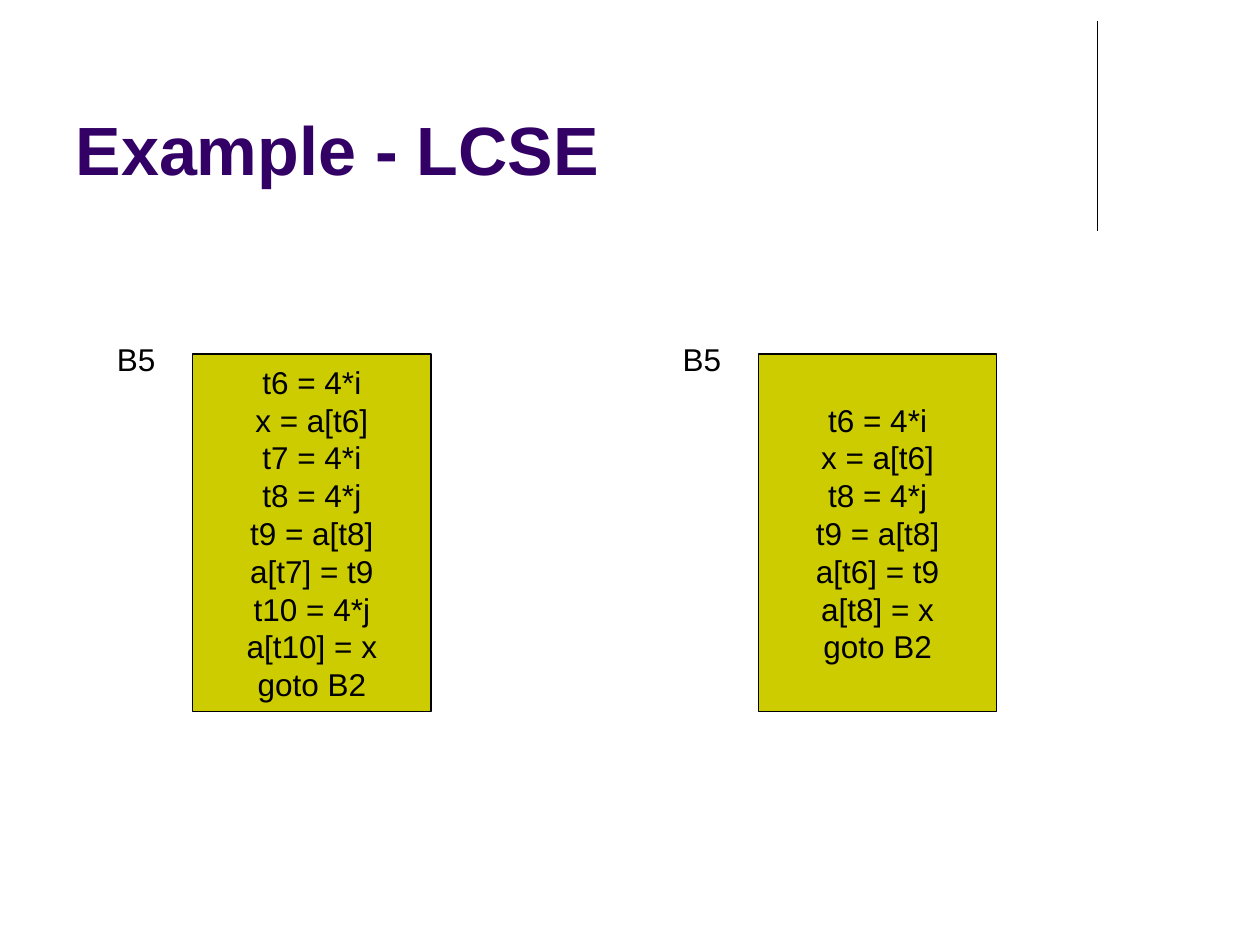
from dataclasses import dataclass

from pptx import Presentation
from pptx.dml.color import RGBColor as RGB
from pptx.enum.shapes import MSO_CONNECTOR as CONN, MSO_SHAPE as SHAPE
from pptx.enum.text import MSO_ANCHOR as ANCHOR, MSO_AUTO_SIZE as AUTO, PP_ALIGN as ALIGN
from pptx.oxml.xmlchemy import OxmlElement
from pptx.util import Inches, Pt


@dataclass(frozen=True)
class Theme:
    """Colours, font and sizes of the slide."""
    font: str = "Arial"
    title: RGB = RGB(0x33, 0x00, 0x66)
    ink: RGB = RGB(0, 0, 0)
    block: RGB = RGB(0xCC, 0xCC, 0x00)
    title_size: float = 39
    body_size: float = 18
    line: float = 0.75


THEME = Theme()
BEFORE = ["t6 = 4*i", "x = a[t6]", "t7 = 4*i", "t8 = 4*j", "t9 = a[t8]",
          "a[t7] = t9", "t10 = 4*j", "a[t10] = x", "goto B2"]
AFTER = ["t6 = 4*i", "x = a[t6]", "t8 = 4*j", "t9 = a[t8]",
         "a[t6] = t9", "a[t8] = x", "goto B2"]


def write(tf, lines, size=THEME.body_size, color=THEME.ink, bold=False,
          align=ALIGN.LEFT, anchor=ANCHOR.TOP, wrap=False, auto=AUTO.NONE):
    """Fill a text frame with one paragraph per line."""
    tf.word_wrap, tf.auto_size, tf.vertical_anchor = wrap, auto, anchor
    for i, line in enumerate(lines):
        p = tf.add_paragraph() if i else tf.paragraphs[0]
        p.alignment = align
        r = p.add_run()
        r.text = line
        r.font.name, r.font.size, r.font.bold = THEME.font, Pt(size), bold
        r.font.color.rgb = color


def add_header(s, x, y, w, h, text):
    """Place the title and the vertical rule to its right."""
    sp = s.shapes.title
    sp.left, sp.top, sp.width, sp.height = map(Inches, (x, y, w, h))
    write(sp.text_frame, [text], size=THEME.title_size, color=THEME.title,
          bold=True, anchor=ANCHOR.BOTTOM, wrap=True)
    rule_x, top = x + w - 0.04, y + 0.04
    rule = s.shapes.add_connector(
        CONN.STRAIGHT, *map(Inches, (rule_x, top, rule_x, top + 1.66)))
    rule.line.color.rgb, rule.line.width = THEME.ink, Pt(THEME.line)
    rule._element.spPr.append(OxmlElement("a:effectLst"))


def add_basic_block(s, x, y, w, h, label, code):
    """Place a labelled basic block: the name at top left, the code box beside it."""
    dx, dy = 0.7, 0.16
    sp = s.shapes.add_shape(
        SHAPE.RECTANGLE, *map(Inches, (x + dx, y + dy, w - dx, h - dy)))
    sp.shadow.inherit = False
    sp.fill.solid()
    sp.fill.fore_color.rgb = THEME.block
    sp.line.color.rgb, sp.line.width = THEME.ink, Pt(THEME.line)
    write(sp.text_frame, code, align=ALIGN.CENTER, anchor=ANCHOR.MIDDLE)
    tag = s.shapes.add_textbox(*map(Inches, (x, y, 0.51, 0.4)))
    write(tag.text_frame, [label], auto=AUTO.SHAPE_TO_FIT_TEXT)


def main():
    """Build and save the slide."""
    prs = Presentation()
    prs.slide_width, prs.slide_height = Inches(10), Inches(7.5)
    s = prs.slides.add_slide(prs.slide_layouts[5])
    add_header(s, 0.5, 0.13, 8.25, 1.42, "Example - LCSE")
    left, pitch = 0.83, 4.49
    for col, code in enumerate((BEFORE, AFTER)):
        add_basic_block(s, left + col * pitch, 2.65, 2.59, 3, "B5", code)
    prs.save("out.pptx")


if __name__ == "__main__":
    main()
